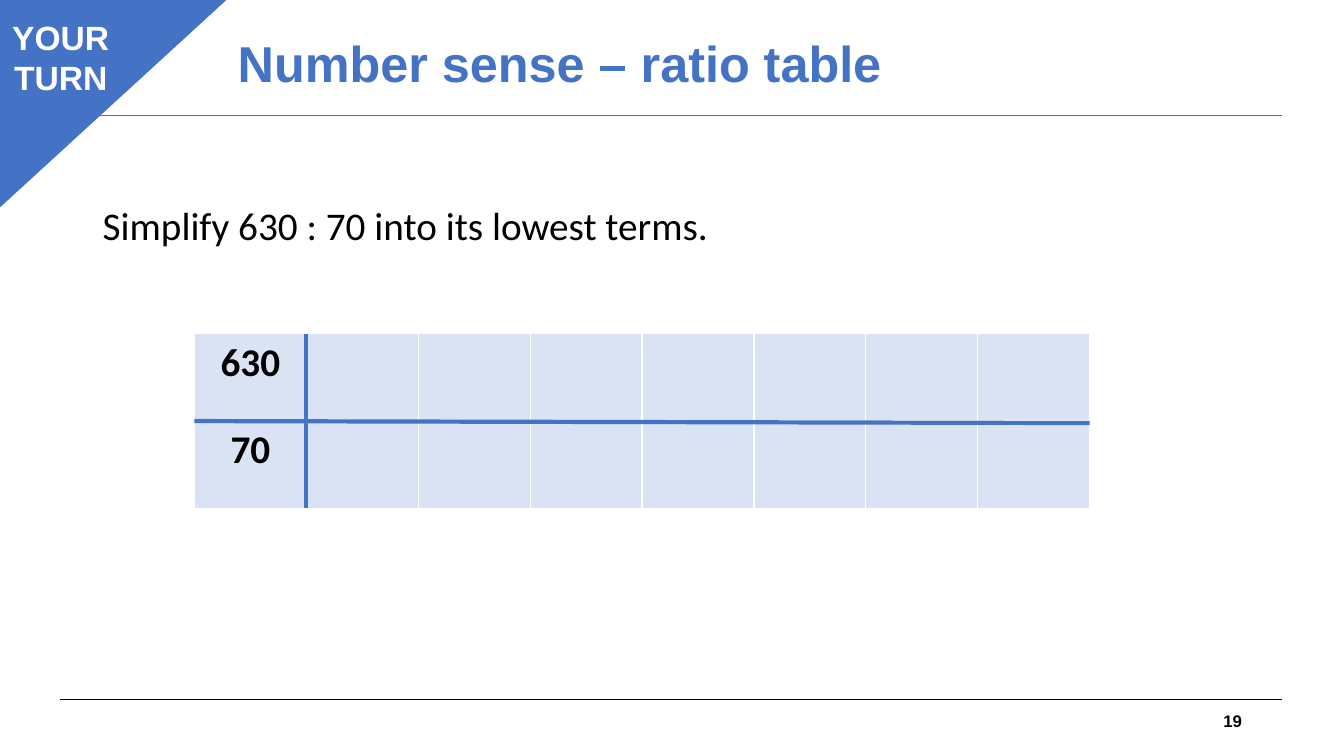
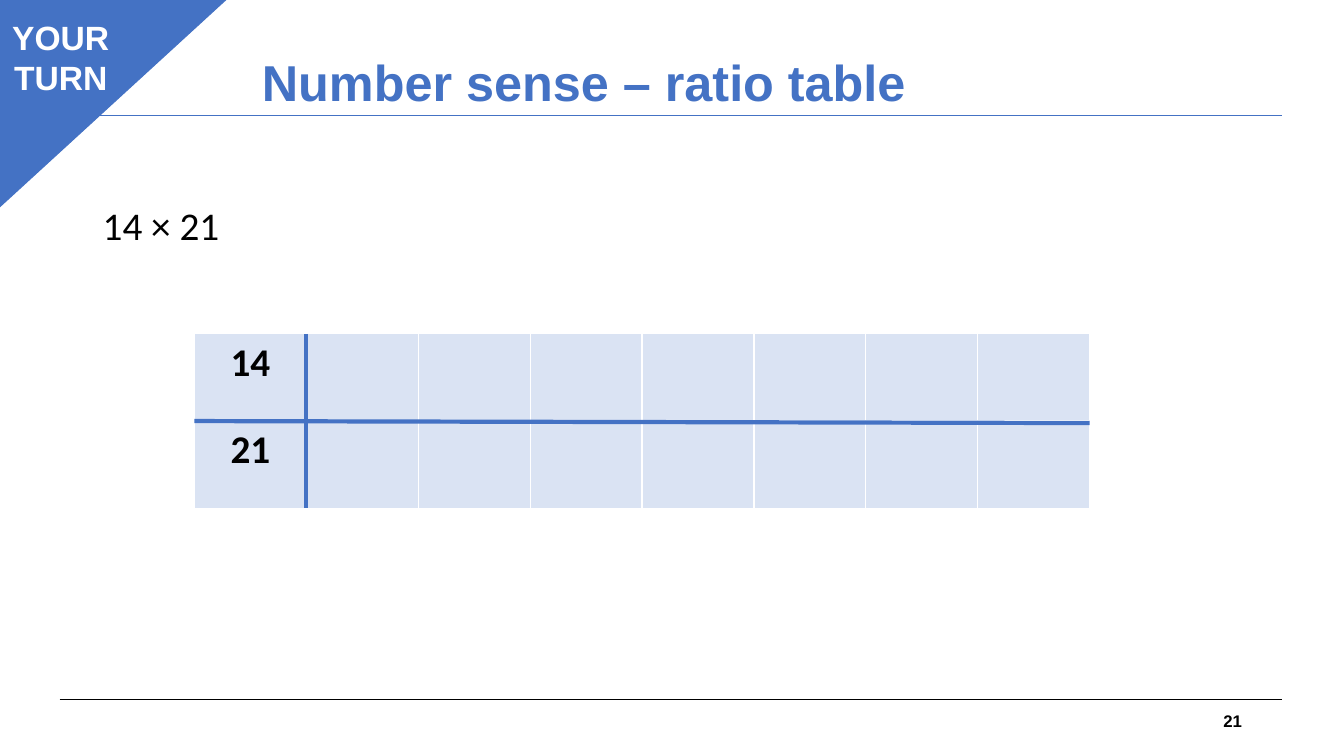
"""Build two ratio-table practice slides."""
from dataclasses import dataclass

from lxml import etree
from pptx import Presentation
from pptx.dml.color import RGBColor
from pptx.enum.shapes import MSO_CONNECTOR, MSO_SHAPE
from pptx.enum.text import MSO_ANCHOR, PP_ALIGN
from pptx.oxml.ns import qn
from pptx.util import Cm, Pt

STRAIGHT = MSO_CONNECTOR.STRAIGHT
TRIANGLE, RECTANGLE = MSO_SHAPE.ISOSCELES_TRIANGLE, MSO_SHAPE.RECTANGLE
TOP, MIDDLE = MSO_ANCHOR.TOP, MSO_ANCHOR.MIDDLE
LEFT, CENTER, RIGHT = PP_ALIGN.LEFT, PP_ALIGN.CENTER, PP_ALIGN.RIGHT


@dataclass(frozen=True)
class Theme:
    blue: RGBColor = RGBColor(0x44, 0x72, 0xC4)
    pale: RGBColor = RGBColor(0xDA, 0xE3, 0xF3)
    black: RGBColor = RGBColor(0, 0, 0)
    white: RGBColor = RGBColor(255, 255, 255)
    heading_font: str = "Arial"
    body_font: str = "Calibri"
    title_size: int = 36
    body_size: int = 28
    label_size: int = 24
    number_size: int = 12
    thin: float = 0.75
    thick: float = 3


theme = Theme()


def write(frame, text, font, size, color, bold=True, align=LEFT, anchor=TOP):
    frame.word_wrap = True
    frame.vertical_anchor = anchor
    frame.text = text
    for para in frame.paragraphs:
        para.alignment = align
        for span in para.runs:
            span.font.name = font
            span.font.size = Pt(size)
            span.font.bold = bold
            span.font.color.rgb = color
    return frame.paragraphs[0]


def draw_line(page, start_x, start_y, end_x, end_y, color, width):
    line = page.shapes.add_connector(STRAIGHT, Cm(start_x), Cm(start_y), Cm(end_x), Cm(end_y))
    line.line.color.rgb = color
    line.line.width = Pt(width)
    etree.SubElement(line._element.spPr, qn("a:effectLst"))


TITLE = "Number sense – ratio table"
RULE_LEFT, RULE_RIGHT = 1.5, 32.31
TABLE_LEFT, TABLE_TOP = 4.9, 8.41
COLUMNS, COLUMN_WIDTH, ROW_HEIGHT = 8, 2.82, 2.2
TABLE_WIDTH, TABLE_HEIGHT = COLUMNS * COLUMN_WIDTH, 2 * ROW_HEIGHT
TABLE_RIGHT = TABLE_LEFT + TABLE_WIDTH
TABLE_MIDDLE = TABLE_TOP + ROW_HEIGHT

exercises = [
    ("19", "Simplify 630 : 70 into its lowest terms.", ("630", "70"), 5.74, 0),
    ("21", "14 × 21", ("14", "21"), 6.35, 0.48),
]

deck = Presentation()
deck.slide_width, deck.slide_height = Cm(33.87), Cm(19.05)

for number, task, ratio, title_left, title_top in exercises:
    page = deck.slides.add_slide(deck.slide_layouts[6])

    draw_line(page, RULE_LEFT, 17.63, RULE_RIGHT, 17.63, theme.black, theme.thin)
    draw_line(page, RULE_LEFT, 2.9, RULE_RIGHT, 2.9, theme.blue, theme.thin)

    title_box = page.shapes.add_textbox(Cm(title_left), Cm(title_top), Cm(26.6), Cm(3.33))
    para = write(title_box.text_frame, TITLE, theme.heading_font, theme.title_size,
                 theme.blue, anchor=MIDDLE)
    para.line_spacing = 0.9

    task_box = page.shapes.add_textbox(Cm(2.34), Cm(5.08), Cm(29.2), Cm(12.09))
    para = write(task_box.text_frame, task, theme.body_font, theme.body_size,
                 theme.black, bold=False)
    para.line_spacing = 0.9
    para.space_before = Pt(10)

    number_box = page.shapes.add_textbox(Cm(23.93), Cm(17.65), Cm(7.62), Cm(1.02))
    write(number_box.text_frame, number, theme.heading_font, theme.number_size,
          theme.black, align=RIGHT, anchor=MIDDLE)

    corner = page.shapes.add_shape(TRIANGLE, Cm(-0.08), Cm(-0.05), Cm(5.82), Cm(5.33))
    corner.adjustments[0] = 1
    corner.rotation = 180
    label = page.shapes.add_shape(RECTANGLE, Cm(0.03), Cm(0.3), Cm(3), Cm(2.11))
    for shape in (corner, label):
        shape.shadow.inherit = False
        shape.fill.solid()
        shape.fill.fore_color.rgb = theme.blue
        shape.line.color.rgb = theme.blue
        shape.line.width = Pt(theme.thin)
    write(label.text_frame, "YOUR\nTURN", theme.heading_font, theme.label_size,
          theme.white, align=CENTER)

    table = page.shapes.add_table(2, COLUMNS, Cm(TABLE_LEFT), Cm(TABLE_TOP),
                                  Cm(TABLE_WIDTH), Cm(TABLE_HEIGHT)).table
    for column in table.columns:
        column.width = Cm(COLUMN_WIDTH)
    for row, term in zip(table.rows, ratio):
        row.height = Cm(ROW_HEIGHT)
        for cell in row.cells:
            cell.fill.solid()
            cell.fill.fore_color.rgb = theme.pale
        write(row.cells[0].text_frame, term, theme.body_font, theme.body_size,
              theme.black, align=CENTER)

    draw_line(page, TABLE_LEFT, TABLE_MIDDLE, TABLE_RIGHT, TABLE_MIDDLE + 0.05,
              theme.blue, theme.thick)
    draw_line(page, TABLE_LEFT + COLUMN_WIDTH, TABLE_TOP, TABLE_LEFT + COLUMN_WIDTH,
              TABLE_TOP + TABLE_HEIGHT, theme.blue, theme.thick)

deck.save("out.pptx")
